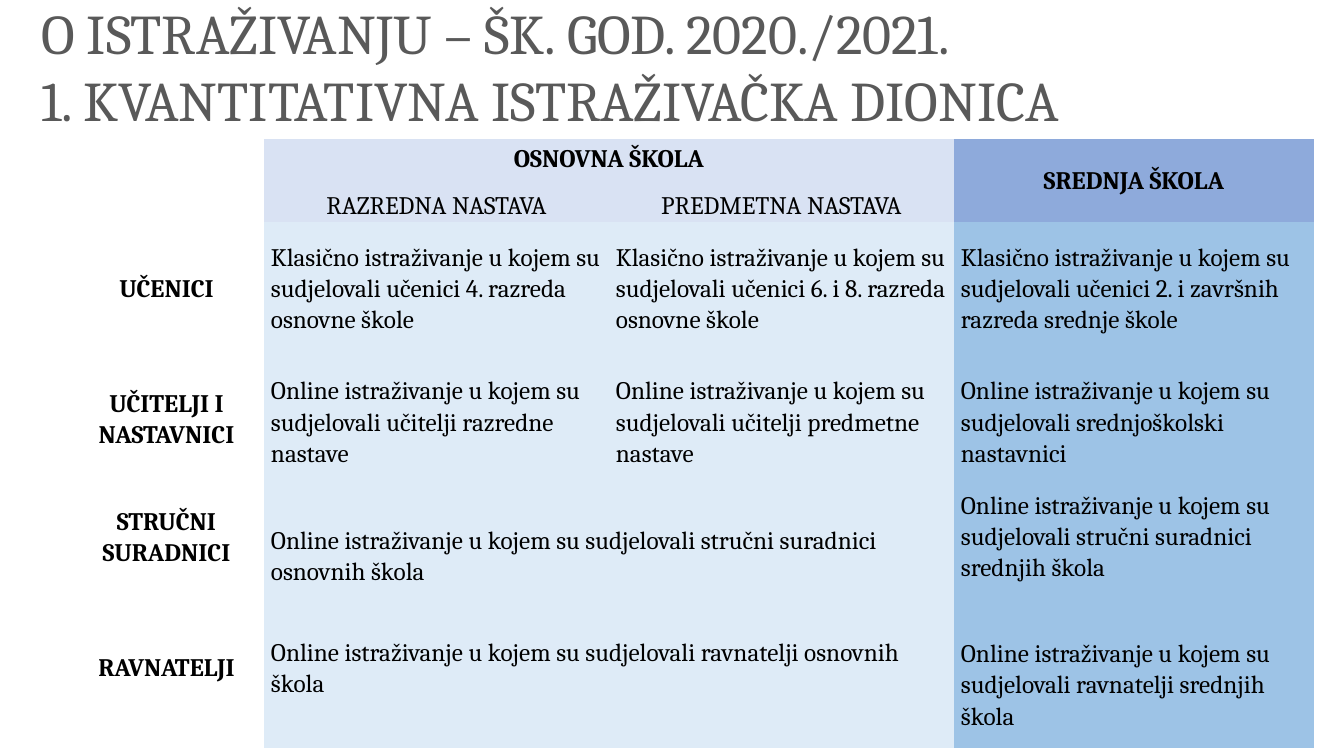
from pptx import Presentation
from pptx import util as u
from pptx.dml.color import RGBColor
from pptx.enum import text

COLORS = {
    "title": "595959", "ink": "000000",
    "primary_head": "D9E2F3", "secondary_head": "8EAADB",
    "primary": "DEEBF7", "secondary": "9DC3E6",
}
NO_GRID_STYLE = "{2D5ABB26-0587-4C30-8999-92F81FD0307C}"
COLUMNS = [195, 345, 345, 360]
ROWS = [38, 45, 132, 136, 129, 127]
INTRO = "Online istraživanje u kojem su sudjelovali "
CLASSIC = "Klasično istraživanje u kojem su sudjelovali učenici "

# Header cells: row, column, last row, last column, text, fill, style
HEADERS = [
    (0, 1, 0, 2, "OSNOVNA ŠKOLA", "primary_head", dict(bold=True)),
    (0, 3, 1, 3, "SREDNJA ŠKOLA", "secondary_head", dict(bold=True)),
    (1, 1, 1, 1, "RAZREDNA NASTAVA", "primary_head", dict(spacing=1.5, before=4)),
    (1, 2, 1, 2, "PREDMETNA NASTAVA", "primary_head", dict(spacing=1.5, before=4)),
]

# Body rows: label, texts from left to right, bottom insets of all cells in px
BODY = [
    ("UČENICI",
     [CLASSIC + "4. razreda osnovne škole",
      CLASSIC + "6. i 8. razreda osnovne škole",
      CLASSIC + "2. i završnih razreda srednje škole"], [0, 0, 0, 0]),
    ("UČITELJI I NASTAVNICI",
     [INTRO + "učitelji razredne nastave",
      INTRO + "učitelji predmetne nastave",
      INTRO + "srednjoškolski nastavnici"], [6, 0, 0, 0]),
    ("STRUČNI SURADNICI",
     [INTRO + "stručni suradnici osnovnih škola",
      INTRO + "stručni suradnici srednjih škola"], [38, 0, 38]),
    ("RAVNATELJI",
     [INTRO + "ravnatelji osnovnih škola",
      INTRO + "ravnatelji srednjih škola"], [34, 34, 0]),
]


def px(n):
    return u.Emu(round(n * 914400 / 100.8))


class Deck:
    font = "Cambria"

    def __init__(self):
        self.prs = Presentation()
        self.prs.slide_width, self.prs.slide_height = px(1344), px(756)
        self.s = self.prs.slides.add_slide(self.prs.slide_layouts[5])

    def fill_paragraph(self, p, words, size, color, bold=False, align="LEFT",
                       spacing=1.07, before=0, after=0):
        p.alignment = text.PP_ALIGN[align]
        p.line_spacing = spacing
        p.space_before, p.space_after = u.Pt(before), u.Pt(after)
        r = p.add_run()
        r.text = words
        r.font.name, r.font.size, r.font.bold = self.font, u.Pt(size), bold
        r.font.color.rgb = RGBColor.from_string(COLORS[color])

    def title(self, x, y, w, h, lines):
        sp = self.s.shapes.title
        sp.left, sp.top, sp.width, sp.height = map(px, (x, y, w, h))
        tf = sp.text_frame
        tf.word_wrap = True
        tf.auto_size = text.MSO_AUTO_SIZE.NONE
        tf.vertical_anchor = text.MSO_ANCHOR.MIDDLE
        for i, line in enumerate(lines):
            p = tf.add_paragraph() if i else tf.paragraphs[0]
            self.fill_paragraph(p, line, 40, "title", spacing=1.0)

    def table(self, x, y, columns, rows):
        frame = self.s.shapes.add_table(len(rows), len(columns), px(x), px(y),
                                        px(sum(columns)), px(sum(rows)))
        tbl = frame.table
        tbl.first_row = tbl.horz_banding = False
        tbl._tbl.tblPr[0].text = NO_GRID_STYLE
        for column, width in zip(tbl.columns, columns):
            column.width = px(width)
        for row, height in zip(tbl.rows, rows):
            row.height = px(height)
        for cell in tbl.iter_cells():
            cell.margin_left = cell.margin_right = px(7)
            cell.margin_top = cell.margin_bottom = 0
            cell.vertical_anchor = text.MSO_ANCHOR.MIDDLE
            cell.fill.background()
        return tbl

    def cell(self, tbl, row, col, last_row, last_col, words, fill=None,
             inset=0, **style):
        cell = tbl.cell(row, col)
        if (row, col) != (last_row, last_col):
            cell.merge(tbl.cell(last_row, last_col))
        if fill:
            cell.fill.solid()
            cell.fill.fore_color.rgb = RGBColor.from_string(COLORS[fill])
        cell.margin_bottom = px(inset)
        p = cell.text_frame.paragraphs[0]
        self.fill_paragraph(p, words, 18, "ink", **style)


def main():
    deck = Deck()

    # Title
    deck.title(31, -7, 1226, 146, ["O ISTRAŽIVANJU – ŠK. GOD. 2020./2021.",
                                   "1. KVANTITATIVNA ISTRAŽIVAČKA DIONICA"])

    # Table header
    tbl = deck.table(69, 139, COLUMNS, ROWS)
    for *place, words, fill, style in HEADERS:
        deck.cell(tbl, *place, words, fill, align="CENTER", **style)

    # Table body: two texts mean that the primary school columns are merged
    for row, (label, texts, insets) in enumerate(BODY, start=2):
        deck.cell(tbl, row, 0, row, 0, label, inset=insets[0],
                  bold=True, align="CENTER")
        spans = [(1, 2), (3, 3)] if len(texts) == 2 else [(1, 1), (2, 2), (3, 3)]
        for (first, last), words, inset in zip(spans, texts, insets[1:]):
            fill = "secondary" if first == 3 else "primary"
            deck.cell(tbl, row, first, row, last, words, fill, inset, after=4)

    deck.prs.save("out.pptx")


if __name__ == "__main__":
    main()
